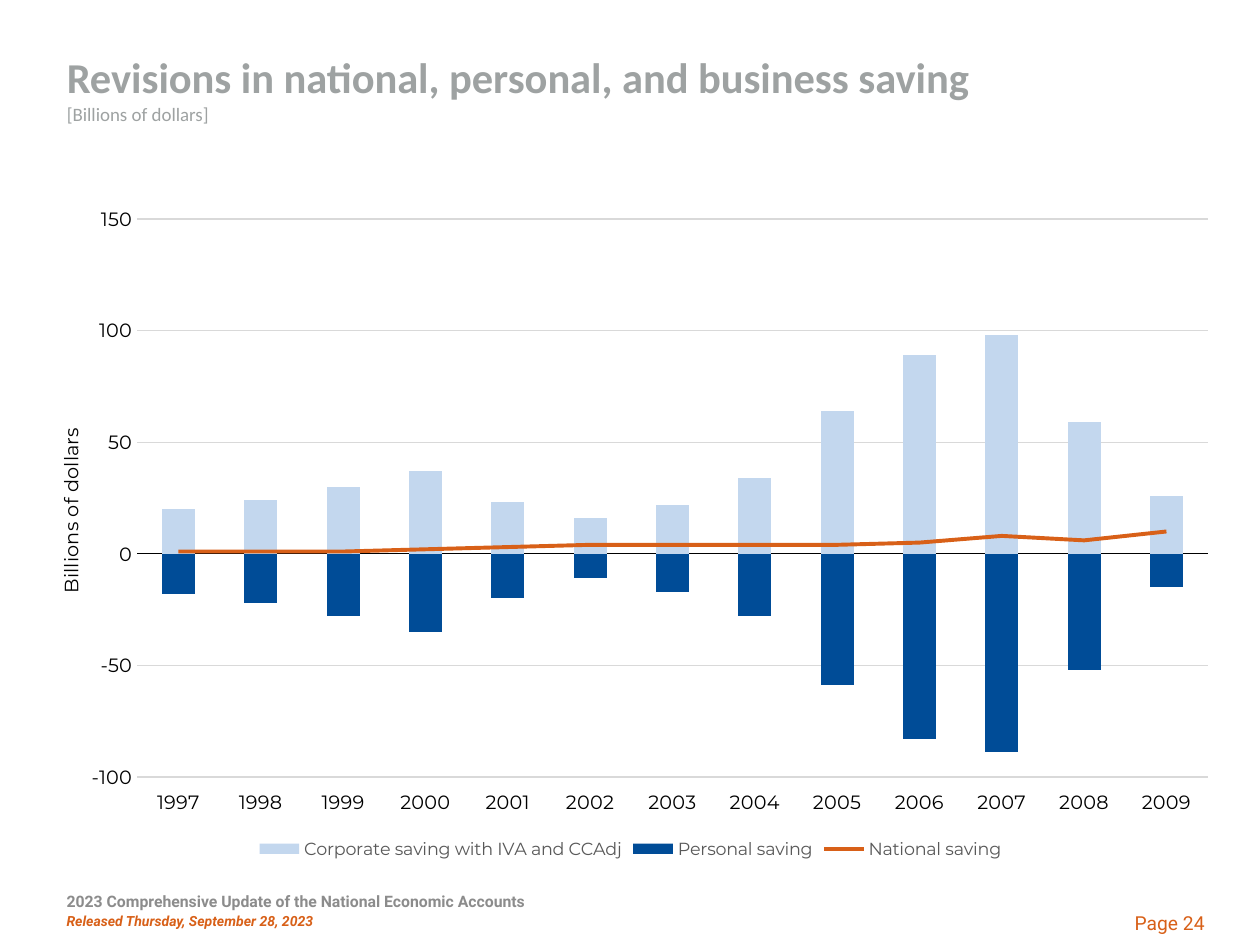
from lxml import etree
from pptx import Presentation
from pptx.chart.data import CategoryChartData
from pptx.dml.color import RGBColor
from pptx.enum.chart import (XL_CHART_TYPE, XL_LEGEND_POSITION, XL_MARKER_STYLE,
                             XL_TICK_LABEL_POSITION, XL_TICK_MARK)
from pptx.enum.text import MSO_ANCHOR, MSO_AUTO_SIZE, PP_ALIGN
from pptx.oxml import parse_xml
from pptx.oxml.ns import qn
from pptx.util import Inches, Pt

STACKED = XL_CHART_TYPE.COLUMN_STACKED
BOTTOM = XL_LEGEND_POSITION.BOTTOM
NO_MARKER = XL_MARKER_STYLE.NONE
LOW = XL_TICK_LABEL_POSITION.LOW
NO_TICK = XL_TICK_MARK.NONE
MIDDLE = MSO_ANCHOR.MIDDLE
NO_FIT = MSO_AUTO_SIZE.NONE
LEFT, RIGHT = PP_ALIGN.LEFT, PP_ALIGN.RIGHT
CHART_NS = "http://schemas.openxmlformats.org/drawingml/2006/chart"

COLORS = {
    "title": "9EA2A2", "footer": "8C8C8C", "orange": "D86018", "black": "000000",
    "grid": "D9D9D9", "legend": "595959", "corporate": "C3D7EE", "personal": "004C97",
}
YEARS = [str(year) for year in range(1997, 2010)]
SAVING = {
    "Corporate saving with IVA and CCAdj": [20, 24, 30, 37, 23, 16, 22, 34, 64, 89, 98, 59, 26],
    "Personal saving": [-18, -22, -28, -35, -20, -11, -17, -28, -59, -83, -89, -52, -15],
    "National saving": [1, 1, 1, 2, 3, 4, 4, 4, 4, 5, 8, 6, 10],
}


def rgb(name):
    """Return the named colour."""
    return RGBColor.from_string(COLORS[name])


def style_font(font, size, color, name, bold=False, italic=False):
    """Set the look of a font."""
    font.size, font.name, font.bold, font.italic = Pt(size), name, bold, italic
    font.color.rgb = rgb(color)


def add_run(p, text, *look, **flags):
    """Add a formatted run to a paragraph."""
    r = p.add_run()
    r.text = text
    style_font(r.font, *look, **flags)


def add_textbox(s, box):
    """Add a wrapping text box and return its frame."""
    tf = s.shapes.add_textbox(*map(Inches, box)).text_frame
    tf.word_wrap = True
    return tf


def add_title(s, box):
    """Fill the title placeholder with the heading and its unit."""
    sp = s.shapes.title
    sp.left, sp.top, sp.width, sp.height = map(Inches, box)
    tf = sp.text_frame
    tf.auto_size, tf.vertical_anchor, tf.margin_bottom = NO_FIT, MIDDLE, 0
    p = tf.paragraphs[0]
    p.alignment = LEFT
    add_run(p, "Revisions in national, personal, and business saving",
            24.3, "title", "Calibri", bold=True)
    p.add_line_break()
    add_run(p, "[Billions of dollars]", 10.8, "title", "Calibri")


def move_last_series_to_line(chart):
    """Turn the last column series into a line on the same axes."""
    bars = chart.plots[0]._element
    ser = bars.findall(qn("c:ser"))[-1]
    line = parse_xml(f'<c:lineChart xmlns:c="{CHART_NS}"><c:grouping val="standard"/>'
                     '<c:varyColors val="0"/></c:lineChart>')
    for flag in ser.findall(qn("c:invertIfNegative")):
        ser.remove(flag)
    line.append(ser)
    etree.SubElement(line, qn("c:marker")).set("val", "1")
    for axis in bars.findall(qn("c:axId")):
        etree.SubElement(line, qn("c:axId")).set("val", axis.get("val"))
    bars.addnext(line)


def set_plot_layout(chart, x, y, w, h):
    """Fix the inner plot area as fractions of the chart."""
    area = chart.plots[0]._element.getparent()
    for old in area.findall(qn("c:layout")):
        area.remove(old)
    layout = etree.Element(qn("c:layout"))
    manual = etree.SubElement(layout, qn("c:manualLayout"))
    settings = {"layoutTarget": "inner", "xMode": "edge", "yMode": "edge",
                "x": x, "y": y, "w": w, "h": h}
    for tag, value in settings.items():
        etree.SubElement(manual, qn(f"c:{tag}")).set("val", str(value))
    area.insert(0, layout)


def style_axes(chart):
    """Format both axes, the gridlines and the axis title."""
    cat, val = chart.category_axis, chart.value_axis
    for axis in (cat, val):
        axis.major_tick_mark = axis.minor_tick_mark = NO_TICK
        style_font(axis.tick_labels.font, 11, "black", "Montserrat")
    cat.tick_label_position = LOW
    cat.format.line.color.rgb = rgb("black")
    cat.format.line.width = Pt(0.75)
    val.minimum_scale, val.maximum_scale, val.major_unit = -100, 150, 50
    val.format.line.fill.background()
    grid = val.major_gridlines.format.line
    grid.color.rgb, grid.width = rgb("grid"), Pt(0.75)
    p = val.axis_title.text_frame.paragraphs[0]
    add_run(p, "Billions of dollars", 11, "black", "Montserrat")


def add_saving_chart(s, box):
    """Add the stacked columns with the national saving line."""
    data = CategoryChartData(number_format="0")
    data.categories = YEARS
    for name, values in SAVING.items():
        data.add_series(name, values)
    chart = s.shapes.add_chart(STACKED, *map(Inches, box), data).chart
    chart.has_title = False
    style_font(chart.font, 10, "black", "Calibri")
    move_last_series_to_line(chart)
    set_plot_layout(chart, 0.073, 0.03, 0.927, 0.839)
    style_axes(chart)
    columns, line = chart.plots
    columns.gap_width, columns.overlap = 150, 100
    columns.vary_by_categories = False
    for series, color in zip(columns.series, ("corporate", "personal")):
        series.format.fill.solid()
        series.format.fill.fore_color.rgb = rgb(color)
        series.invert_if_negative = False
    national = line.series[0]
    national.format.line.color.rgb = rgb("orange")
    national.format.line.width = Pt(2.25)
    national.marker.style = NO_MARKER
    national.smooth = False
    chart.has_legend = True
    chart.legend.position = BOTTOM
    chart.legend.include_in_layout = False
    style_font(chart.legend.font, 10, "legend", "Montserrat")


def add_footer(s, box):
    """Add the release name and date."""
    tf = add_textbox(s, box)
    p = tf.paragraphs[0]
    add_run(p, "2023 Comprehensive Update of the National Economic Accounts",
            9, "footer", "Roboto", bold=True)
    p.space_after = Pt(1.1)
    p = tf.add_paragraph()
    add_run(p, "Released Thursday, September 28, 2023",
            8, "orange", "Roboto", bold=True, italic=True)
    p.space_after = Pt(1.1)


def add_page_number(s, box):
    """Add the page number."""
    tf = add_textbox(s, box)
    tf.vertical_anchor = MIDDLE
    p = tf.paragraphs[0]
    p.alignment = RIGHT
    add_run(p, "Page 24", 11, "orange", "Roboto")


def main():
    """Build the slide and save it."""
    prs = Presentation()
    prs.slide_width, prs.slide_height = Inches(10), Inches(7.5)
    s = prs.slides.add_slide(prs.slide_layouts[5])
    add_title(s, (0.43, 0.33, 7.75, 0.69))
    add_saving_chart(s, (0.42, 1.58, 9.17, 5.28))
    add_footer(s, (0.43, 7.03, 7.25, 0.55))
    add_page_number(s, (8.58, 7.16, 1.08, 0.32))
    prs.save("out.pptx")


if __name__ == "__main__":
    main()
